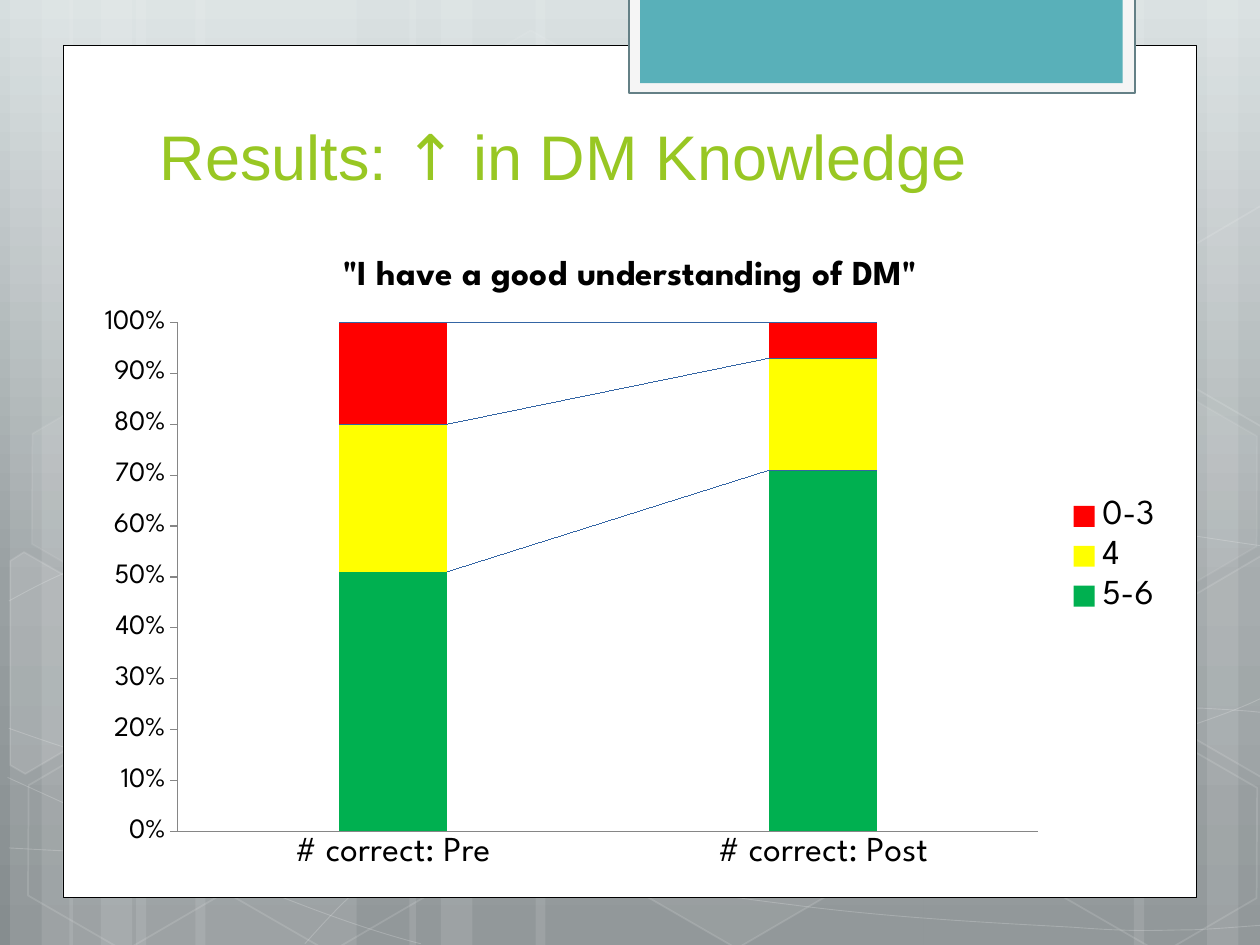
import copy
import math

import pptx
import pptx.chart.data
import pptx.dml.color
import pptx.enum.chart
import pptx.enum.shapes
import pptx.enum.text
import pptx.oxml
import pptx.oxml.ns
import pptx.util

INCH = 2.54
THEME = {
    "white": "FFFFFF", "black": "000000", "axis": "868686", "title": "98C723",
    "frame": "F5F5F5", "edge": "648086", "tab": "59B0B9",
    "back": [(0, "D6DEDF"), (0.62, "99A0A2"), (1, "868D8F")],
    "font": "League Spartan", "head": "Arial",
    "size": {"title": 36, "label": 20, "tick": 16, "base": 10},
}

TITLE = [("Results: ", "head"), ("↑ ", "font"), ("in DM Knowledge", "head")]
CHART = '"I have a good understanding of DM"'
CATS = ["# correct: Pre", "# correct: Post"]
SERIES = [("5-6", (51, 71), "00B050"), ("4", (29, 22), "FFFF00"), ("0-3", (20, 7), "FF0000")]

# All places below are in inches: left, top, width, height.
FRAME = (0.67, 1.83, 8.67, 5.17)
PLOT = (1.41, 2.56, 6.83, 4.04)
BARS = [  # left, width
    (1.08, 1.75), (0.08, 0.5), (0.33, 0.83), (1.55, 1.75), (0.55, 0.5), (0.8, 0.83),
    (7.33, 1.75), (9.58, 0.5), (9, 0.83), (4.25, 3.08), (3.25, 0.5), (3.5, 0.83),
]
CURVES = [  # start, then two handles and an end for each piece
    [(0.07, 6.73), (0.61, 6.76), (1.15, 6.79), (1.9, 6.78), (2.65, 6.77), (3.58, 6.75),
     (4.58, 6.65), (5.58, 6.55), (7, 6.36), (7.92, 6.17), (8.83, 5.98), (9.77, 5.68),
     (10.07, 5.51)],
    [(0.07, 4.77), (0.36, 4.61), (0.65, 4.46), (1.21, 4.31), (1.78, 4.16), (2.59, 3.94),
     (3.47, 3.87), (4.36, 3.8), (5.44, 3.79), (6.54, 3.87), (7.64, 3.95), (9.47, 4.26),
     (10.07, 4.34)],
    [(0.06, 6.17), (1.27, 6.72), (2.47, 7.27), (3.34, 7.49)],
    [(0.07, 5.78), (0.38, 5.89), (0.7, 6), (1.28, 6.16), (1.86, 6.31), (2.73, 6.56),
     (3.57, 6.73), (4.4, 6.9), (5.45, 7.08), (6.28, 7.18), (7.11, 7.29), (8, 7.33),
     (8.53, 7.36), (9.05, 7.4), (9.19, 7.38), (9.45, 7.38), (9.71, 7.37), (9.89, 7.35),
     (10.07, 7.34)],
    [(2.42, 7.49), (2.6, 7.29), (2.78, 7.09), (3.02, 6.91), (3.26, 6.73), (3.6, 6.53),
     (3.88, 6.39), (4.16, 6.25), (4.33, 6.19), (4.7, 6.09), (5.06, 5.99), (5.73, 5.85),
     (6.08, 5.78), (6.44, 5.71), (6.49, 5.71), (6.8, 5.69), (7.11, 5.66), (7.6, 5.63),
     (7.94, 5.62), (8.29, 5.61), (8.86, 5.62), (8.86, 5.62), (9.08, 5.62), (9.31, 5.62),
     (9.53, 5.62), (9.71, 5.63), (9.88, 5.64), (9.97, 5.65), (10.06, 5.66), (10.03, 5.65),
     (10.06, 5.66)],
]
CELLS = [  # left, top, fill and line opacity in percent
    (3.34, 0.36, 4, 8), (4.97, 5.89, 6, 12), (0.11, 5.91, 0, 12), (0.14, 3.12, 7, 8),
    (1.74, 5.92, 0, 12), (7.53, 4.53, 10, 12), (8.34, 5.93, 0, 12), (8.34, 3.14, 7, 8),
]
CUTS = [  # corners as seen, centre of turning, fill opacity
    ([(0.08, 4.45), (0.19, 4.38), (0.96, 4.82), (0.95, 5.7), (0.2, 6.14), (0.08, 6.07)],
     (0.36, 5.35), 10),
    ([(9.26, 4.85), (10.01, 4.41), (10.09, 4.46), (10.09, 6.13), (10.02, 6.17), (9.26, 5.73)],
     (9.85, 5.2), 4),
    ([(9.26, 2.07), (10.01, 1.63), (10.1, 1.68), (10.09, 3.35), (10.02, 3.39), (9.26, 2.95)],
     (9.85, 2.41), 0),
]
PANELS = [  # place, fill, line, line width
    ((0.5, 0.36, 9, 6.76), "white", "black", 0.5),
    ((4.99, -0.02, 4.02, 0.76), "frame", "edge", 1.25),
    ((5.08, -0.02, 3.83, 0.68), "tab", None, 0),
]
TILT = 30

KIND = pptx.enum.shapes.MSO_SHAPE
TICK = pptx.enum.chart.XL_TICK_MARK
name_of = pptx.oxml.ns.qn


def place(*nums):
    return [pptx.util.Cm(num * INCH) for num in nums]


def tint(name):
    return pptx.dml.color.RGBColor.from_string(THEME.get(name, name))


def put(item, vals):
    for key, val in vals.items():
        setattr(item, key, val)


def style(font, size, color="black", face="font", **more):
    put(font, {"size": pptx.util.Pt(THEME["size"][size]), "name": THEME[face], **more})
    font.color.rgb = tint(color)


def shade(fill, color, solid=100):
    """Fill with a colour at an opacity in percent; none at zero."""
    if not color or not solid:
        fill.background()
        return
    fill.solid()
    fill.fore_color.rgb = tint(color)
    if solid < 100:
        node = fill._xPr.find(".//" + name_of("a:srgbClr"))
        node.append(node.makeelement(name_of("a:alpha"), {"val": str(solid * 1000)}))


def paint(shape, fill, line, width=0, solid=100, stroke=100):
    shape.shadow.inherit = False
    shade(shape.fill, fill, solid)
    shade(shape.line.fill, line, stroke)
    if line:
        shape.line.width = pptx.util.Pt(width)


def trace(shapes, dots, close):
    dots = [place(*dot) for dot in dots]
    pen = shapes.build_freeform(*dots[0])
    pen.add_line_segments(dots[1:], close=close)
    return pen.convert_to_shape()


def bend(shape):
    """Turn each three straight pieces into one cubic curve."""
    route = shape.element.find(".//" + name_of("a:path"))
    lines = route.findall(name_of("a:lnTo"))
    for i in range(0, len(lines), 3):
        curve = route.makeelement(name_of("a:cubicBezTo"), {})
        lines[i].addprevious(curve)
        for line in lines[i:i + 3]:
            curve.append(line[0])
            route.remove(line)
    return shape


def turn(dots, mid, angle):
    cos, sin = math.cos(math.radians(angle)), math.sin(math.radians(angle))
    gaps = [(x - mid[0], y - mid[1]) for x, y in dots]
    return [(mid[0] + x * cos - y * sin, mid[1] + x * sin + y * cos) for x, y in gaps]


def draw_back(slide):
    fill = slide.background.fill
    fill.gradient()
    fill.gradient_angle = 270
    stops = slide.element.find(".//" + name_of("a:gsLst"))
    stops.append(copy.deepcopy(stops[-1]))
    for stop, (spot, color) in zip(fill.gradient_stops, THEME["back"]):
        stop.position = spot
        stop.color.rgb = tint(color)


def draw_decor(shapes):
    for left, width in BARS:
        bar = shapes.add_shape(KIND.RECTANGLE, *place(left, 0, width, 7.5))
        paint(bar, "white", None, solid=10)
    for dots in CURVES:
        paint(bend(trace(shapes, dots, False)), None, "white", 0.5, stroke=20)
    for left, top, solid, stroke in CELLS:
        cell = shapes.add_shape(KIND.HEXAGON, *place(left, top, 1.75, 1.52))
        cell.adjustments[0] = 0.285
        cell.rotation = TILT
        paint(cell, "white", "white", 1, solid, stroke)
    for dots, mid, solid in CUTS:
        cut = trace(shapes, turn(dots, mid, -TILT), True)
        cut.rotation = TILT
        paint(cut, "white", "white", 1, solid, 12)
    for spot, fill, line, width in PANELS:
        paint(shapes.add_shape(KIND.RECTANGLE, *place(*spot)), fill, line, width)


def draw_chart(shapes):
    data = pptx.chart.data.CategoryChartData()
    data.categories = CATS
    for name, vals, _ in SERIES:
        data.add_series(name, vals)
    kind = pptx.enum.chart.XL_CHART_TYPE.COLUMN_STACKED_100
    chart = shapes.add_chart(kind, *place(*FRAME), data).chart
    style(chart.font, "base")
    put(chart, {"has_title": True, "has_legend": True})
    chart.chart_title.text_frame.text = CHART
    style(chart.chart_title.text_frame.paragraphs[0].runs[0].font, "label", bold=True)
    put(chart.legend, {"position": pptx.enum.chart.XL_LEGEND_POSITION.RIGHT,
                       "include_in_layout": False})
    style(chart.legend.font, "label")
    for axis, tick, size in ((chart.category_axis, TICK.NONE, "label"),
                             (chart.value_axis, TICK.OUTSIDE, "tick")):
        put(axis, {"has_major_gridlines": False, "major_tick_mark": tick,
                   "minor_tick_mark": TICK.NONE})
        style(axis.tick_labels.font, size)
        axis.format.line.color.rgb = tint("axis")
    put(chart.value_axis.tick_labels, {"number_format": "0%", "number_format_is_linked": False})
    plot = chart.plots[0]
    put(plot, {"gap_width": 300, "overlap": 100, "vary_by_categories": False})
    for item, (_, _, color) in zip(plot.series, SERIES):
        shade(item.format.fill, color)
    tune(chart.element)


def tune(root):
    """Add the lines that join the series, and fix the plot's place."""
    space = pptx.oxml.ns.nsdecls("c")
    root.find(".//" + name_of("c:overlap")).addnext(
        pptx.oxml.parse_xml(f"<c:serLines {space}/>"))
    area = root.find(".//" + name_of("c:plotArea"))
    for old in area.findall(name_of("c:layout")):
        area.remove(old)
    left, top, width, height = FRAME
    shares = ((PLOT[0] - left) / width, (PLOT[1] - top) / height,
              PLOT[2] / width, PLOT[3] / height)
    modes = "".join(f'<c:{key}Mode val="edge"/>' for key in "xy")
    sides = "".join(f'<c:{key} val="{val:.4f}"/>' for key, val in zip("xywh", shares))
    area.insert(0, pptx.oxml.parse_xml(
        f'<c:layout {space}><c:manualLayout><c:layoutTarget val="inner"/>'
        f"{modes}{sides}</c:manualLayout></c:layout>"))


def draw_title(shapes):
    frame = shapes.add_textbox(*place(1.17, 0.83, 7.68, 0.75)).text_frame
    put(frame, {"word_wrap": True, "vertical_anchor": pptx.enum.text.MSO_ANCHOR.BOTTOM})
    for text, face in TITLE:
        run = frame.paragraphs[0].add_run()
        run.text = text
        style(run.font, "title", "title", face)


deck = pptx.Presentation()
deck.slide_width, deck.slide_height = place(10, 7.5)
page = deck.slides.add_slide(deck.slide_layouts[6])
draw_back(page)
for draw in (draw_decor, draw_chart, draw_title):
    draw(page.shapes)
deck.save("out.pptx")
